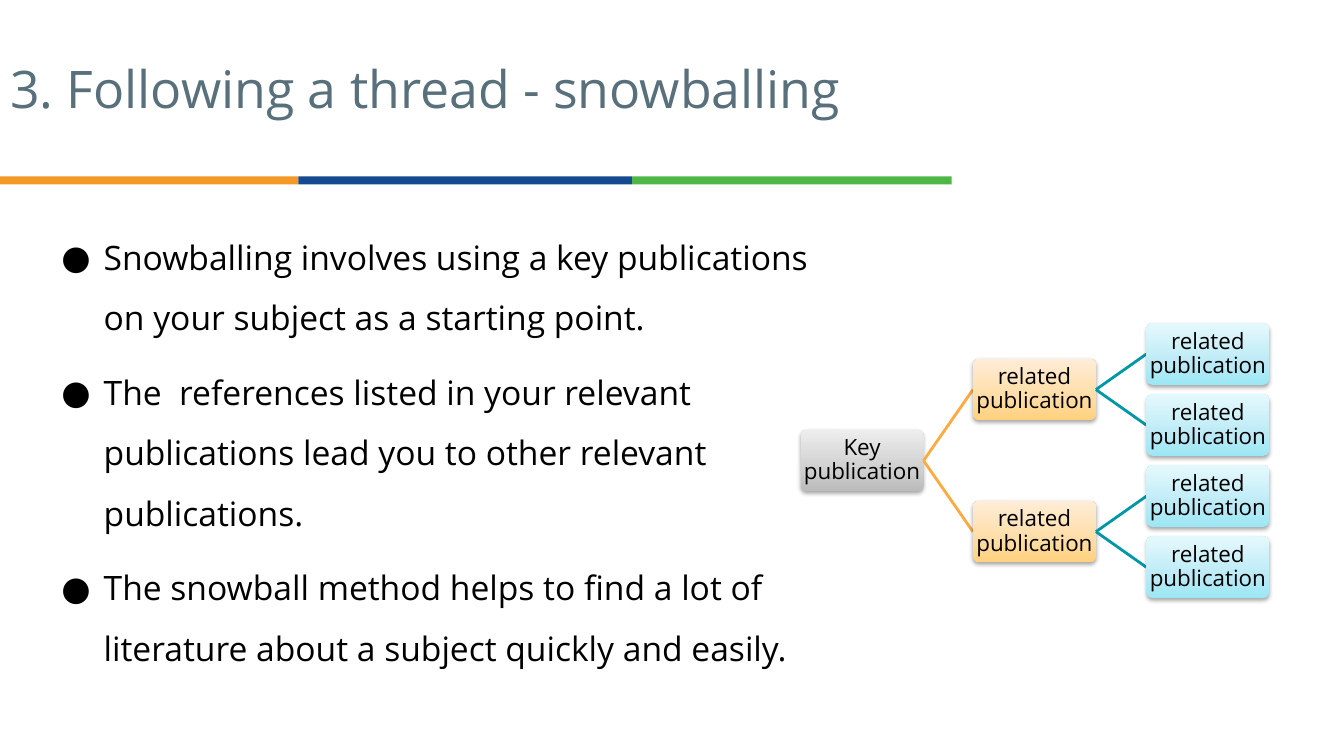
from lxml.etree import SubElement
from pptx import Presentation
from pptx.dml.color import RGBColor
from pptx.enum.shapes import MSO_CONNECTOR, MSO_SHAPE
from pptx.enum.text import MSO_ANCHOR, MSO_AUTO_SIZE, PP_ALIGN
from pptx.oxml.ns import qn
from pptx.util import Inches, Pt

HUES = {
    "ink": "000000", "title": "586F7C",
    "orange": "F49925", "blue": "154A90", "green": "4EB748",
    "amber": "FFAA3F", "teal": "0097A7",
}
FADES = [
    ["BBBBBB", "CFCFCF", "EDEDED"],
    ["FFD17D", "FFDCA3", "FFEDD8"],
    ["9CE7F5", "BBEAF6", "E4F9FC"],
]
STOPS = [0, 35, 100]
POINTS = [
    "Snowballing involves using a key publications on your subject as a starting point.",
    "The  references listed in your relevant publications lead you to other relevant publications.",
    "The snowball method helps to find a lot of literature about a subject quickly and easily.",
]
BARS = [(0, 2.96, "orange"), (2.96, 3.31, "blue"), (6.27, 3.17, "green")]
COLS = [7.94, 9.65, 11.37]
LINKS = ["amber", "teal"]
WIDE, HIGH = 1.22, 0.61


def apply(target, values):
    for name, value in values.items():
        setattr(target, name, value)


def add(parent, tag, **attrs):
    return SubElement(parent, qn(tag), attrs)


class Deck:
    face = "Open Sans"

    def __init__(self):
        self.show = Presentation()
        apply(self.show, {"slide_width": Inches(13.33), "slide_height": Inches(7.5)})
        self.slide = self.show.slides.add_slide(self.show.slide_layouts[5])

    def frame(self, shape, pad, anchor):
        across, down = pad
        apply(shape.text_frame, {
            "word_wrap": True, "auto_size": MSO_AUTO_SIZE.NONE, "vertical_anchor": anchor,
            "margin_left": Inches(across), "margin_right": Inches(across),
            "margin_top": Inches(down), "margin_bottom": Inches(down),
        })
        return shape.text_frame

    def label(self, para, text, size, hue, **form):
        para.text = text
        apply(para, form)
        apply(para.font, {"name": self.face, "size": Pt(size)})
        para.font.color.rgb = RGBColor.from_string(HUES[hue])

    def title(self, text):
        shape = self.slide.shapes.title
        apply(shape, {"left": Inches(0), "top": Inches(0.32),
                      "width": Inches(10.51), "height": Inches(1.18)})
        frame = self.frame(shape, (0.1, 0.05), MSO_ANCHOR.MIDDLE)
        self.label(frame.paragraphs[0], text, 37, "title",
                   line_spacing=0.9, alignment=PP_ALIGN.LEFT)

    def bar(self, left, width, hue):
        shape = self.slide.shapes.add_shape(
            MSO_SHAPE.RECTANGLE, Inches(left), Inches(1.75), Inches(width), Inches(0.08))
        shape.shadow.inherit = False
        shape.fill.solid()
        shape.fill.fore_color.rgb = RGBColor.from_string(HUES[hue])
        shape.line.fill.background()

    def bullets(self, items):
        shape = self.slide.shapes.add_textbox(
            Inches(0.43), Inches(2.1), Inches(7.92), Inches(3.94))
        frame = self.frame(shape, (0.1, 0.05), MSO_ANCHOR.TOP)
        for rank, text in enumerate(items):
            para = frame.add_paragraph() if rank else frame.paragraphs[0]
            props = para._p.get_or_add_pPr()
            props.set("marL", str(Inches(0.5)))
            props.set("indent", str(Inches(-0.42)))
            add(add(props, "a:buClr"), "a:srgbClr", val=HUES["ink"])
            add(props, "a:buFont", typeface=self.face)
            add(props, "a:buChar", char="●")
            self.label(para, text, 24, "ink", line_spacing=1.5,
                       space_before=Pt(10 if rank else 0))

    def card(self, left, mid, text, fade):
        shape = self.slide.shapes.add_shape(
            MSO_SHAPE.ROUNDED_RECTANGLE, Inches(left), Inches(mid - HIGH / 2),
            Inches(WIDE), Inches(HIGH))
        shape.adjustments[0] = 0.1
        shape.fill.gradient()
        shape.fill.gradient_angle = 90
        shape.line.fill.background()
        shape.shadow.inherit = False
        props = shape._element.spPr
        stops = props.find(qn("a:gradFill")).find(qn("a:gsLst"))
        stops.clear()
        for place, hue in zip(STOPS, fade):
            add(add(stops, "a:gs", pos=str(place * 1000)), "a:srgbClr", val=hue)
        shade = add(props.find(qn("a:effectLst")), "a:outerShdw", blurRad=str(Pt(3.1)),
                    dist=str(Pt(1.6)), dir="5400000", rotWithShape="0")
        add(add(shade, "a:srgbClr", val=HUES["ink"]), "a:alpha", val="35000")
        frame = self.frame(shape, (0.01, 0.01), MSO_ANCHOR.MIDDLE)
        self.label(frame.paragraphs[0], text, 16, "ink",
                   line_spacing=0.9, alignment=PP_ALIGN.CENTER)

    def link(self, start, end, hue):
        line = self.slide.shapes.add_connector(
            MSO_CONNECTOR.STRAIGHT, *(Inches(value) for value in start + end))
        line.line.width = Pt(2)
        line.line.color.rgb = RGBColor.from_string(HUES[hue])
        add(line._element.spPr, "a:effectLst")

    def tree(self, level, mid, spread):
        text = "related publication" if level else "Key publication"
        self.card(COLS[level], mid, text, FADES[level])
        if level < len(LINKS):
            for side in (-1, 1):
                child = mid + side * spread / 2
                self.link((COLS[level] + WIDE, mid), (COLS[level + 1], child), LINKS[level])
                self.tree(level + 1, child, spread / 2)


def main():
    deck = Deck()
    for bar in BARS:
        deck.bar(*bar)
    deck.title("3. Following a thread - snowballing")
    deck.bullets(POINTS)
    deck.tree(0, 4.57, 1.41)
    deck.show.save("out.pptx")


if __name__ == "__main__":
    main()
